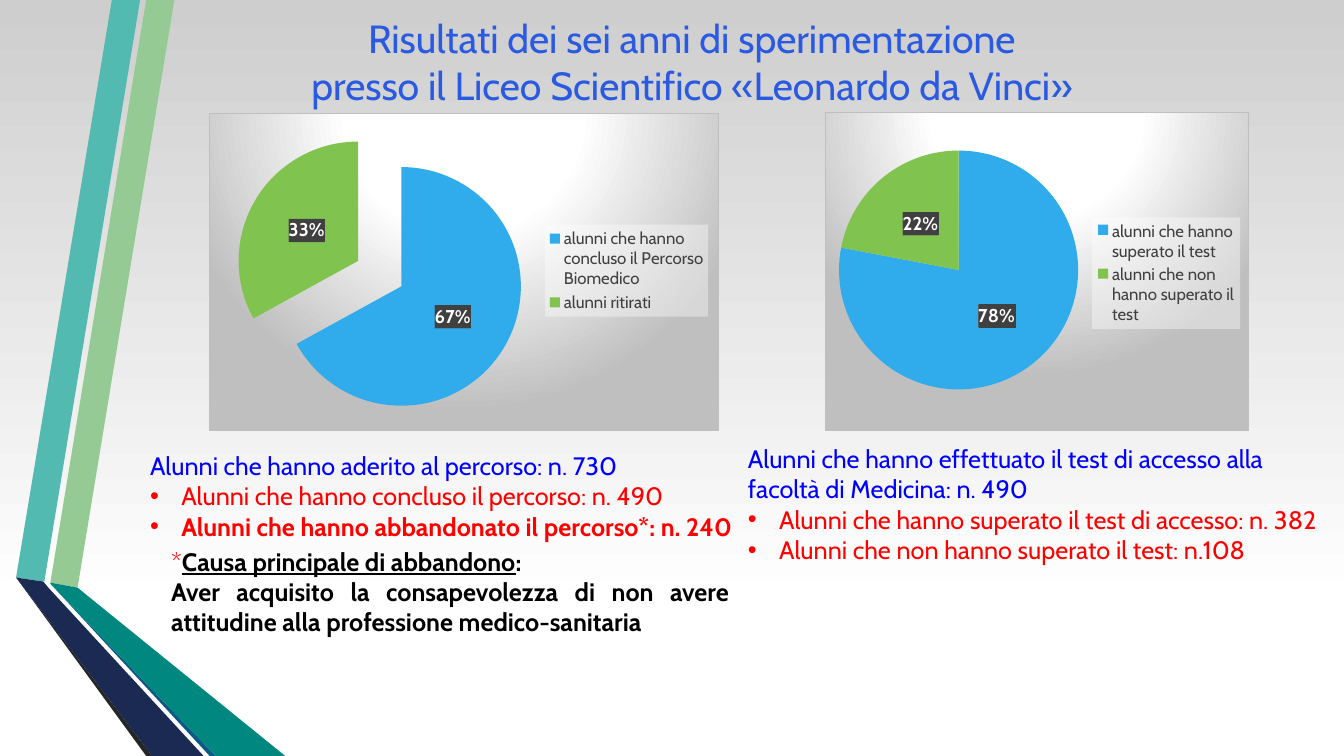
from lxml import etree
from pptx import Presentation
from pptx.chart.data import CategoryChartData
from pptx.dml.color import RGBColor
from pptx.enum.chart import XL_CHART_TYPE, XL_LABEL_POSITION, XL_LEGEND_POSITION
from pptx.enum.text import MSO_ANCHOR, MSO_AUTO_SIZE, PP_ALIGN
from pptx.oxml import parse_xml
from pptx.oxml.ns import nsdecls, qn
from pptx.util import Inches, Pt

PIE = XL_CHART_TYPE.PIE
LABEL_CENTER = XL_LABEL_POSITION.CENTER
LEGEND_RIGHT = XL_LEGEND_POSITION.RIGHT
TOP = MSO_ANCHOR.TOP
FIT_SHAPE = MSO_AUTO_SIZE.SHAPE_TO_FIT_TEXT
NO_FIT = MSO_AUTO_SIZE.NONE
CENTER, JUSTIFY, LEFT = PP_ALIGN.CENTER, PP_ALIGN.JUSTIFY, PP_ALIGN.LEFT
FONT = "Cabin"
COLORS = {
    "white": "FFFFFF", "black": "000000", "backdrop": "CECECE",
    "light_green": "96CA94", "aqua": "52BAB0", "charcoal": "262626",
    "petrol": "0C5A82", "teal": "008880", "navy": "1A2A52",
    "title": "2A5AE2", "blue": "0000FF", "red": "FF0000",
    "slice_blue": "30ACEC", "slice_green": "80C34F",
    "legend": "404040", "chart_edge": "BFBFBF",
    "label_dark": "404040", "label_light": "595959",
}
RIBBONS = [
    ("light_green", [(0.5, 5.78), (0.77, 5.83), (1.73, 0), (1.45, 0)]),
    ("aqua", [(1.39, 0), (1.11, 0), (0.16, 5.73), (0.44, 5.77)]),
    ("charcoal", [(0.16, 5.73), (1.45, 7.5), (1.51, 7.5)]),
    ("petrol", [(0.5, 5.79), (2.08, 7.5), (2.14, 7.5)]),
    ("teal", [(0.5, 5.79), (2.14, 7.5), (2.83, 7.5), (0.77, 5.83), (0.5, 5.78)]),
    ("navy", [(2.02, 7.5), (0.48, 5.83), (0.43, 5.77), (0.16, 5.73), (1.51, 7.5)]),
]


def rgb(name):
    return RGBColor.from_string(COLORS[name])


def style_font(font, size, color, bold=False, underline=False):
    font.name = FONT
    font.size = Pt(size)
    font.color.rgb = rgb(color)
    font.bold = bold
    font.underline = underline


def set_background(slide):
    fill = slide.background.fill
    fill.gradient()
    fill.gradient_angle = 90
    for stop, position, color in zip(fill.gradient_stops, (0.2, 1), ("white", "backdrop")):
        stop.position = position
        stop.color.rgb = rgb(color)


def add_ribbon(slide, color, points):
    corners = [(Inches(x), Inches(y)) for x, y in points]
    builder = slide.shapes.build_freeform(*corners[0])
    builder.add_line_segments(corners[1:], close=True)
    ribbon = builder.convert_to_shape()
    ribbon.shadow.inherit = False
    ribbon.fill.solid()
    ribbon.fill.fore_color.rgb = rgb(color)
    ribbon.line.fill.background()


def set_title(slide, text):
    title = slide.shapes.title
    title.left, title.top = Inches(1.82), Inches(0.09)
    title.width, title.height = Inches(10.08), Inches(1.05)
    frame = title.text_frame
    frame.text = text
    frame.vertical_anchor = TOP
    frame.auto_size = NO_FIT
    frame.paragraphs[0].alignment = CENTER
    for run in frame.paragraphs[0].runs:
        style_font(run.font, 28, "title")


def add_bullet(paragraph):
    props = paragraph._p.get_or_add_pPr()
    props.set("marL", str(Inches(0.31)))
    props.set("indent", str(-Inches(0.31)))
    etree.SubElement(props, qn("a:buFont")).set("typeface", "Arial")
    etree.SubElement(props, qn("a:buChar")).set("char", "•")


def add_notes_box(slide, place, lines, alignment=LEFT):
    frame = slide.shapes.add_textbox(*map(Inches, place)).text_frame
    frame.word_wrap = True
    frame.auto_size = FIT_SHAPE
    for index, (bulleted, pieces) in enumerate(lines):
        paragraph = frame.add_paragraph() if index else frame.paragraphs[0]
        paragraph.alignment = alignment
        if bulleted:
            add_bullet(paragraph)
        for text, color, bold, underline in pieces:
            run = paragraph.add_run()
            run.text = text
            style_font(run.font, 18, color, bold, underline)


def plain(text, color="blue", bold=False):
    return False, [(text, color, bold, False)]


def bullet(text, bold=False):
    return True, [(text, "red", bold, False)]


def shape_props(content):
    return parse_xml(f'<c:spPr {nsdecls("c", "a")}>{content}</c:spPr>')


def color_xml(name, extra=""):
    return f'<a:srgbClr val="{COLORS[name]}">{extra}</a:srgbClr>'


def manual_layout(box, target=""):
    values = "".join(f'<c:{key} val="{value}"/>' for key, value in zip("xywh", box))
    return parse_xml(
        f'<c:layout {nsdecls("c")}><c:manualLayout>{target}'
        f'<c:xMode val="edge"/><c:yMode val="edge"/>{values}'
        '</c:manualLayout></c:layout>')


def fill_chart_area(chart):
    stops = "".join(
        f'<a:gs pos="{position}">{color_xml(color)}</a:gs>'
        for position, color in ((0, "white"), (39000, "white"), (100000, "chart_edge")))
    chart._chartSpace.find(qn("c:chart")).addnext(shape_props(
        f'<a:gradFill><a:gsLst>{stops}</a:gsLst><a:path path="circle">'
        '<a:fillToRect l="50000" t="-80000" r="50000" b="180000"/></a:path></a:gradFill>'
        f'<a:ln w="9525"><a:solidFill>{color_xml("chart_edge")}</a:solidFill></a:ln>'))


def place_pie(chart, box):
    area = chart._chartSpace.find(qn("c:chart")).find(qn("c:plotArea"))
    for layout in area.findall(qn("c:layout")):
        area.remove(layout)
    area.insert(0, manual_layout(box, '<c:layoutTarget val="inner"/>'))


def style_legend(chart, box):
    chart.has_legend = True
    legend = chart.legend
    legend.position = LEGEND_RIGHT
    legend.include_in_layout = False
    style_font(legend.font, 12, "legend")
    element = legend._element
    for layout in element.findall(qn("c:layout")):
        element.remove(layout)
    element.find(qn("c:legendPos")).addnext(manual_layout(box))
    translucent = color_xml("white", '<a:alpha val="39000"/>')
    element.find(qn("c:overlay")).addnext(
        shape_props(f"<a:solidFill>{translucent}</a:solidFill>"))


def style_labels(series):
    labels = series.data_labels
    labels.show_percentage = True
    labels.show_value = False
    labels.number_format = "0%"
    labels.number_format_is_linked = False
    labels.position = LABEL_CENTER
    style_font(labels.font, 13.3, "white", True)
    labels._element.find(qn("c:txPr")).addprevious(shape_props(
        f'<a:pattFill prst="dkVert"><a:fgClr>{color_xml("label_dark")}</a:fgClr>'
        f'<a:bgClr>{color_xml("label_light")}</a:bgClr></a:pattFill>'))


def add_pie(slide, place, shares, pie_box, legend_box, explosion=0):
    data = CategoryChartData()
    data.categories = list(shares)
    data.add_series("Series 1", list(shares.values()))
    chart = slide.shapes.add_chart(PIE, *map(Inches, place), data).chart
    chart.has_title = False
    style_font(chart.font, 10, "black")
    fill_chart_area(chart)
    place_pie(chart, pie_box)
    style_legend(chart, legend_box)
    chart.plots[0].vary_by_categories = True
    series = chart.plots[0].series[0]
    for index, color in enumerate(("slice_blue", "slice_green")):
        slice_fill = series.points[index].format.fill
        slice_fill.solid()
        slice_fill.fore_color.rgb = rgb(color)
    style_labels(series)
    if explosion:
        series._element.find(qn("c:dPt")).addprevious(
            parse_xml(f'<c:explosion {nsdecls("c")} val="{explosion}"/>'))


def main():
    deck = Presentation()
    deck.slide_width, deck.slide_height = Inches(13.33), Inches(7.5)
    slide = deck.slides.add_slide(deck.slide_layouts[5])
    set_background(slide)
    for color, points in RIBBONS:
        add_ribbon(slide, color, points)
    set_title(slide, "Risultati dei sei anni di sperimentazione\v"
                     "presso il Liceo Scientifico «Leonardo da Vinci»")
    add_notes_box(slide, (1.6, 5.37, 5.73, 1.01), [
        (False, [("*", "red", False, False),
                 ("Causa principale di abbandono", "black", True, True),
                 (":", "black", True, False)]),
        plain("Aver acquisito la consapevolezza di non avere attitudine "
              "alla professione medico-sanitaria", "black", True),
    ], JUSTIFY)
    add_pie(slide, (2.07, 1.12, 5.06, 3.16),
            {"alunni che hanno concluso il Percorso Biomedico": 67, "alunni ritirati": 33},
            (0.05, 0.05, 0.57, 0.91), (0.66, 0.35, 0.32, 0.29), explosion=21)
    add_pie(slide, (8.18, 1.11, 4.21, 3.17),
            {"alunni che hanno superato il test": 78,
             "alunni che non hanno superato il test": 22},
            (0.03, 0.12, 0.57, 0.75), (0.63, 0.33, 0.35, 0.35))
    add_notes_box(slide, (1.39, 4.42, 6.15, 1.01), [
        plain("Alunni che hanno aderito al percorso: n. 730"),
        bullet("Alunni che hanno concluso il percorso: n. 490"),
        bullet("Alunni che hanno abbandonato il percorso*: n. 240", True),
    ])
    add_notes_box(slide, (7.32, 4.35, 5.92, 1.31), [
        plain("Alunni che hanno effettuato il test di accesso alla facoltà di Medicina: n. 490"),
        bullet("Alunni che hanno superato il test di accesso: n. 382"),
        bullet("Alunni che non hanno superato il test: n.108"),
    ])
    deck.save("out.pptx")


if __name__ == "__main__":
    main()
